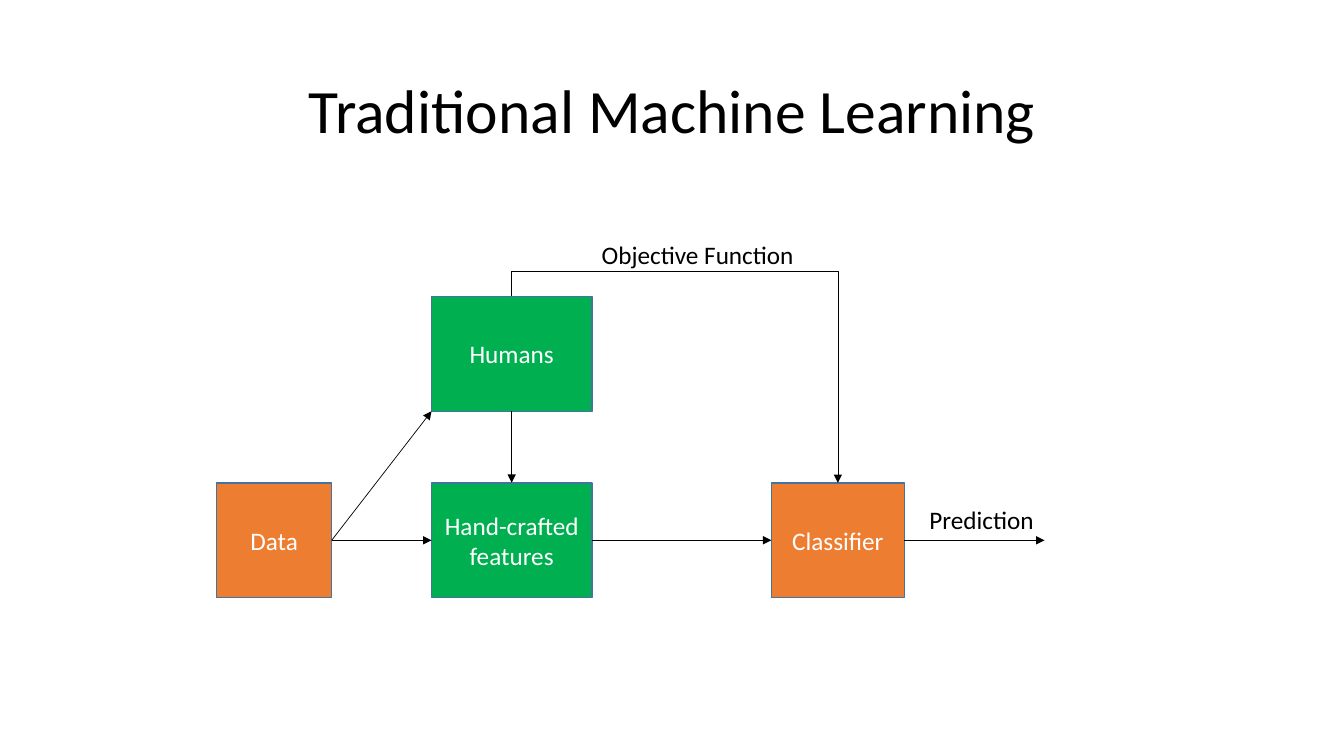
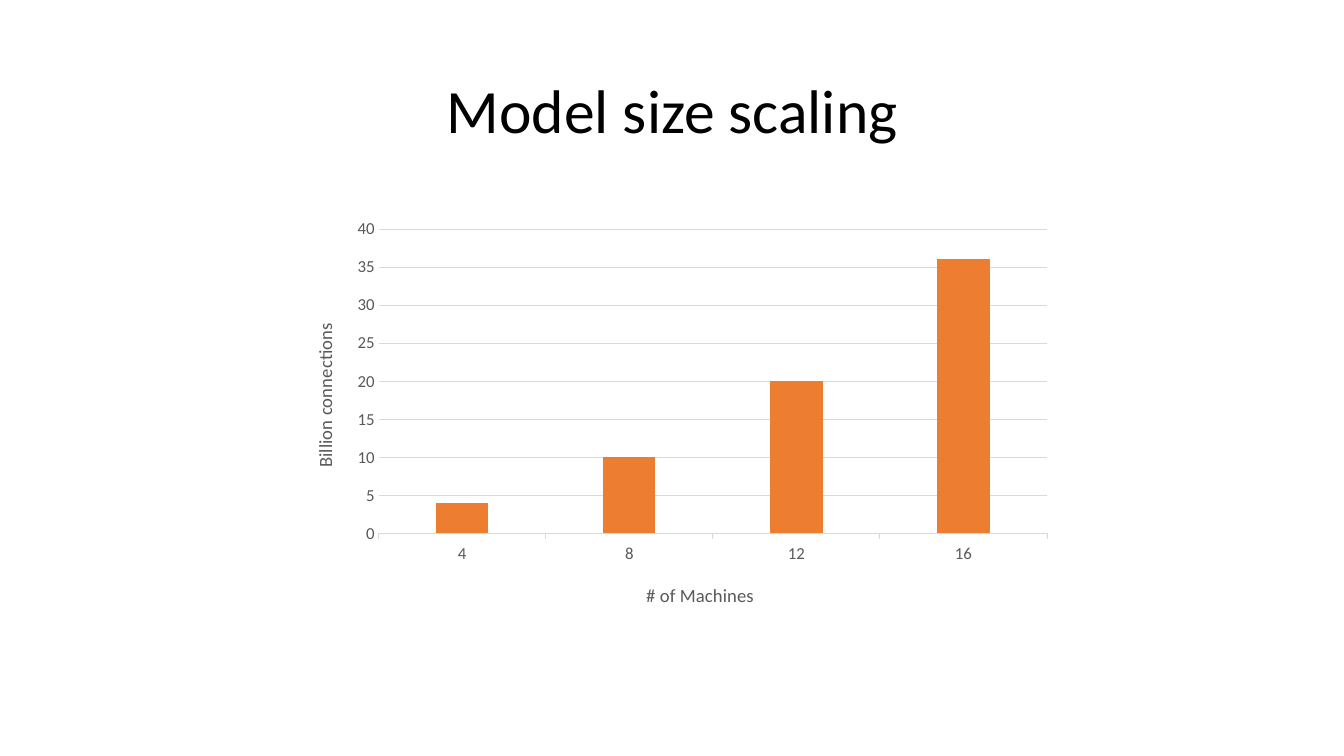
from dataclasses import dataclass

from lxml import etree
from pptx import Presentation
from pptx.chart.data import CategoryChartData
from pptx.dml.color import RGBColor
from pptx.enum.chart import XL_CHART_TYPE, XL_TICK_MARK
from pptx.enum.shapes import MSO_CONNECTOR, MSO_SHAPE
from pptx.enum.text import MSO_ANCHOR, PP_ALIGN
from pptx.oxml.ns import qn
from pptx.util import Inches, Pt

COLUMNS = XL_CHART_TYPE.COLUMN_CLUSTERED
TICK_NONE, TICK_OUT = XL_TICK_MARK.NONE, XL_TICK_MARK.OUTSIDE
STRAIGHT, ELBOW = MSO_CONNECTOR.STRAIGHT, MSO_CONNECTOR.ELBOW
CENTER, LEFT, MIDDLE = PP_ALIGN.CENTER, PP_ALIGN.LEFT, MSO_ANCHOR.MIDDLE
TOP_SITE, LEFT_SITE, BOTTOM_SITE, RIGHT_SITE = range(4)


@dataclass(frozen=True)
class Theme:
    font: str = "Calibri"
    black: RGBColor = RGBColor(0x00, 0x00, 0x00)
    white: RGBColor = RGBColor(0xFF, 0xFF, 0xFF)
    orange: RGBColor = RGBColor(0xED, 0x7D, 0x31)
    green: RGBColor = RGBColor(0x00, 0xB0, 0x50)
    outline: RGBColor = RGBColor(0x43, 0x73, 0x9E)
    chart_text: RGBColor = RGBColor(0x59, 0x59, 0x59)
    grid: RGBColor = RGBColor(0xD9, 0xD9, 0xD9)
    title_size: float = 44
    body_size: float = 18
    tick_size: float = 12
    axis_title_size: float = 13.3


THEME = Theme()
SLIDE_SIZE = (13.33, 7.5)
TITLE_AREA = (0.92, 0.4, 11.5, 1.45)

# Flow diagram: name, left, top, width, fill
BOX_HEIGHT = 1.14
UPPER_ROW, LOWER_ROW = 2.94, 4.79
BOXES = [
    ("Data", 2.15, LOWER_ROW, 1.14, THEME.orange),
    ("Humans", 4.28, UPPER_ROW, 1.59, THEME.green),
    ("Hand-crafted features", 4.28, LOWER_ROW, 1.59, THEME.green),
    ("Classifier", 7.65, LOWER_ROW, 1.32, THEME.orange),
]
LINKS = [
    ("Data", RIGHT_SITE, "Hand-crafted features", LEFT_SITE),
    ("Humans", BOTTOM_SITE, "Hand-crafted features", TOP_SITE),
    ("Hand-crafted features", RIGHT_SITE, "Classifier", LEFT_SITE),
]
PREDICTION_END = 10.36
OBJECTIVE_RISE = 0.25
LABELS = [
    ("Prediction", (9.12, 4.95, 1.63, 0.4)),
    ("Objective Function", (5.87, 2.33, 2.17, 0.4)),
]

# Column chart; layouts are fractions of the chart area
CHART_AREA = (2.83, 2.11, 7.71, 4.08)
MACHINES = ["4", "8", "12", "16"]
CONNECTIONS = [4, 10, 20, 36]
PLOT_LAYOUT = {"layoutTarget": "inner", "xMode": "edge", "yMode": "edge",
               "x": 0.12, "y": 0.04, "w": 0.86, "h": 0.74}
MACHINES_LAYOUT = {"xMode": "edge", "yMode": "edge", "x": 0.46, "y": 0.89}
CONNECTIONS_LAYOUT = {"xMode": "edge", "yMode": "edge", "x": 0.03, "y": 0.26}


def inches(values):
    return [Inches(value) for value in values]


def assign(target, values):
    for name, value in values.items():
        setattr(target, name, value)


def format_font(font, size, color, bold=False):
    assign(font, {"name": THEME.font, "size": Pt(size), "bold": bold})
    font.color.rgb = color


def write(frame, text, size, color, align):
    para = frame.paragraphs[0]
    para.alignment = align
    span = para.add_run()
    span.text = text
    format_font(span.font, size, color)
    return para


def add_titled_slide(deck, text):
    page = deck.slides.add_slide(deck.slide_layouts[5])
    title = page.shapes.title
    assign(title, dict(zip(("left", "top", "width", "height"), inches(TITLE_AREA))))
    title.text_frame.vertical_anchor = MIDDLE
    write(title.text_frame, text, THEME.title_size, THEME.black, CENTER).line_spacing = 0.9
    return page


def add_box(page, name, left, top, width, fill):
    box = page.shapes.add_shape(MSO_SHAPE.RECTANGLE, *inches((left, top, width, BOX_HEIGHT)))
    box.shadow.inherit = False
    box.fill.solid()
    box.fill.fore_color.rgb = fill
    box.line.color.rgb = THEME.outline
    box.line.width = Pt(1)
    box.text_frame.word_wrap = True
    box.text_frame.vertical_anchor = MIDDLE
    write(box.text_frame, name, THEME.body_size, THEME.white, CENTER)
    return box


def add_arrow(page, kind=STRAIGHT, start=(0, 0), end=(0, 0)):
    arrow = page.shapes.add_connector(kind, *start, *end)
    arrow.line.color.rgb = THEME.black
    arrow.line.width = Pt(0.5)
    properties = arrow._element.spPr
    etree.SubElement(properties.find(qn("a:ln")), qn("a:tailEnd"), type="triangle")
    etree.SubElement(properties, qn("a:effectLst"))
    return arrow


def link(arrow, source, source_site, target, target_site):
    arrow.begin_connect(source, source_site)
    arrow.end_connect(target, target_site)


def add_objective_arrow(page, source, target):
    """Rise from the top of source, cross over, and drop onto target."""
    arrow = add_arrow(page, ELBOW)
    link(arrow, source, TOP_SITE, target, TOP_SITE)
    across, drop = arrow.width, arrow.height
    # A quarter turn swaps the frame's sides around its centre.
    assign(arrow, {"left": arrow.left + (across - drop) // 2,
                   "top": arrow.top + (drop - across) // 2,
                   "width": drop, "height": across})
    properties = arrow._element.spPr
    frame = properties.find(qn("a:xfrm"))
    frame.set("rot", str(270 * 60000))
    frame.set("flipH", "1")
    geometry = properties.find(qn("a:prstGeom"))
    guides = geometry.find(qn("a:avLst"))
    if guides is None:
        guides = etree.SubElement(geometry, qn("a:avLst"))
    bend = round(-100000 * Inches(OBJECTIVE_RISE) / drop)
    etree.SubElement(guides, qn("a:gd"), name="adj1", fmla=f"val {bend}")


def add_flow_diagram(page):
    boxes = {row[0]: add_box(page, *row) for row in BOXES}
    for source, source_site, target, target_site in LINKS:
        link(add_arrow(page), boxes[source], source_site, boxes[target], target_site)

    data, humans, classifier = (boxes[name] for name in ("Data", "Humans", "Classifier"))
    middle = data.top + data.height // 2
    add_arrow(page, start=(data.left + data.width, middle),
              end=(humans.left, humans.top + humans.height))
    add_arrow(page, start=(classifier.left + classifier.width, middle),
              end=(Inches(PREDICTION_END), middle))
    add_objective_arrow(page, humans, classifier)

    for text, area in LABELS:
        label = page.shapes.add_textbox(*inches(area))
        label.text_frame.word_wrap = True
        write(label.text_frame, text, THEME.body_size, THEME.black, LEFT)


def set_layout(parent, values):
    """Place a chart part by hand; its layout follows any c:tx child."""
    for old in parent.findall(qn("c:layout")):
        parent.remove(old)
    layout = etree.Element(qn("c:layout"))
    manual = etree.SubElement(layout, qn("c:manualLayout"))
    for name, value in values.items():
        etree.SubElement(manual, qn(f"c:{name}"), val=str(value))
    parent.insert(0 if parent.find(qn("c:tx")) is None else 1, layout)


def format_axis(axis, title, layout, tick_mark):
    assign(axis, {"major_tick_mark": tick_mark, "minor_tick_mark": TICK_NONE})
    format_font(axis.tick_labels.font, THEME.tick_size, THEME.chart_text)
    write(axis.axis_title.text_frame, title, THEME.axis_title_size, THEME.chart_text, CENTER)
    set_layout(axis.axis_title._element, layout)


def format_rule(line):
    line.color.rgb = THEME.grid
    line.width = Pt(0.75)


def add_scaling_chart(page):
    data = CategoryChartData()
    data.categories = MACHINES
    data.add_series("Series 1", CONNECTIONS)
    chart = page.shapes.add_chart(COLUMNS, *inches(CHART_AREA), data).chart
    assign(chart, {"has_legend": False, "has_title": False})
    format_font(chart.font, 10, THEME.black)

    plot = chart.plots[0]
    assign(plot, {"gap_width": 219, "overlap": -27, "vary_by_categories": False})
    fill = plot.series[0].format.fill
    fill.solid()
    fill.fore_color.rgb = THEME.orange

    format_axis(chart.category_axis, "# of Machines", MACHINES_LAYOUT, TICK_OUT)
    format_axis(chart.value_axis, "Billion connections", CONNECTIONS_LAYOUT, TICK_NONE)
    assign(chart.value_axis, {"minimum_scale": 0, "maximum_scale": 40, "major_unit": 5})
    chart.value_axis.format.line.fill.background()
    format_rule(chart.category_axis.format.line)
    format_rule(chart.value_axis.major_gridlines.format.line)
    set_layout(chart._chartSpace.find(".//" + qn("c:plotArea")), PLOT_LAYOUT)


def main():
    deck = Presentation()
    deck.slide_width, deck.slide_height = inches(SLIDE_SIZE)
    add_flow_diagram(add_titled_slide(deck, "Traditional Machine Learning"))
    add_scaling_chart(add_titled_slide(deck, "Model size scaling"))
    deck.save("out.pptx")


if __name__ == "__main__":
    main()
